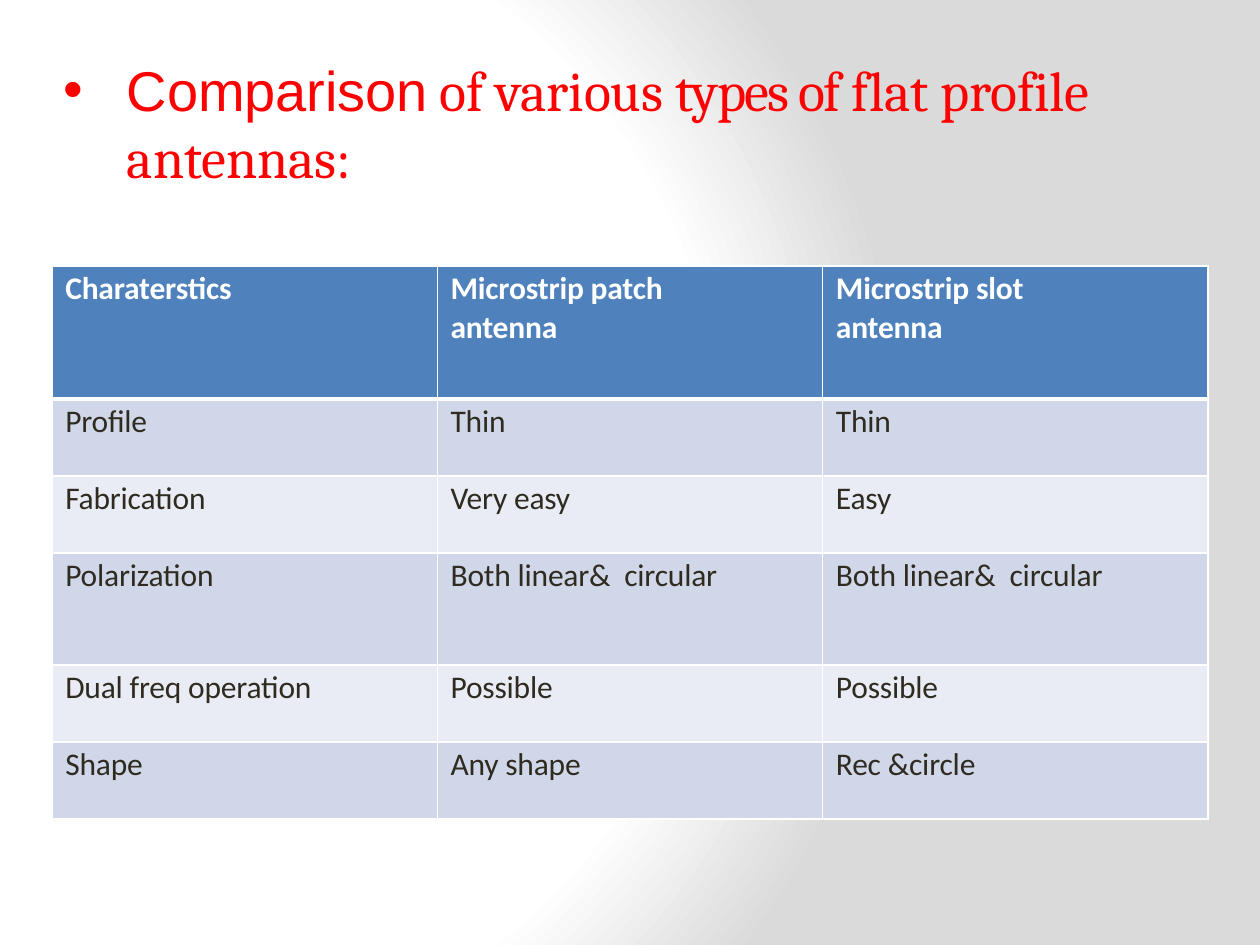
from pptx import Presentation
from pptx.dml.color import RGBColor
from pptx.enum.text import MSO_ANCHOR, MSO_AUTO_SIZE, PP_ALIGN
from pptx.oxml import parse_xml
from pptx.oxml.ns import nsdecls
from pptx.util import Pt

WHITE, RED, DARK = "FFFFFF", "FF0000", "2F2B20"
HEADER_FILL, BAND_FILLS = "4F81BC", ("E9ECF4", "D0D7E8")
BACKGROUND_STOPS = ((0, WHITE), (75, WHITE), (100, "DADADA"))
TITLE_RUNS = (
    ("Comparison", "Arial", -10),
    (" of various ", "Cambria", -10),
    ("types of ", "Cambria", -100),
    ("flat profile antennas:", "Cambria", -10),
)
ROWS = (
    ("Charaterstics", "Microstrip patch\nantenna", "Microstrip slot\nantenna"),
    ("Profile", "Thin", "Thin"),
    ("Fabrication", "Very easy", "Easy"),
    ("Polarization", "Both linear&  circular", "Both linear&  circular"),
    ("Dual freq operation", "Possible", "Possible"),
    ("Shape", "Any shape", "Rec &circle"),
)
ROW_HEIGHTS = (76, 44, 44, 64, 44, 44)
COLUMN_WIDTH = 220.2


def color(value):
    return RGBColor.from_string(value)


def set_values(target, values):
    for name, value in values.items():
        setattr(target, name, value)


def add_run(paragraph, text, font_values, font_color, spacing):
    run = paragraph.add_run()
    run.text = text
    set_values(run.font, font_values)
    run.font.color.rgb = color(font_color)
    run._r.get_or_add_rPr().set("spc", str(spacing))


def set_background(slide):
    stops = "".join(
        f'<a:gs pos="{position * 1000}"><a:srgbClr val="{value}"/></a:gs>'
        for position, value in BACKGROUND_STOPS
    )
    background = parse_xml(
        f'<p:bg {nsdecls("p", "a")}><p:bgPr><a:gradFill rotWithShape="1">'
        f'<a:gsLst>{stops}</a:gsLst><a:path path="circle">'
        '<a:fillToRect l="20000" t="50000" r="100000" b="50000"/></a:path>'
        '</a:gradFill><a:effectLst/></p:bgPr></p:bg>'
    )
    slide._element.cSld.insert(0, background)


def add_bullet(paragraph, left, indent):
    properties = paragraph._p.get_or_add_pPr()
    properties.set("marL", str(Pt(left)))
    properties.set("indent", str(Pt(indent)))
    properties.append(parse_xml(f'<a:buFont {nsdecls("a")} typeface="Arial"/>'))
    properties.append(parse_xml(f'<a:buChar {nsdecls("a")} char="•"/>'))


def fill_title(title):
    set_values(title, {"left": Pt(36), "top": Pt(30.2), "width": Pt(649.4), "height": Pt(79.2)})
    set_values(title.text_frame, {
        "margin_left": 0, "margin_top": Pt(1), "margin_right": 0, "margin_bottom": 0,
        "word_wrap": True, "vertical_anchor": MSO_ANCHOR.MIDDLE,
        "auto_size": MSO_AUTO_SIZE.SHAPE_TO_FIT_TEXT,
    })
    paragraph = title.text_frame.paragraphs[0]
    set_values(paragraph, {"alignment": PP_ALIGN.LEFT, "space_before": Pt(1.1)})
    add_bullet(paragraph, 36.5, -36)
    for text, font_name, spacing in TITLE_RUNS:
        add_run(paragraph, text, {"name": font_name, "size": Pt(32)}, RED, spacing)


def set_borders(cell, widths):
    properties = cell._tc.get_or_add_tcPr()
    for position, (side, width) in enumerate(widths.items()):
        properties.insert(position, parse_xml(
            f'<a:ln{side} {nsdecls("a")} w="{Pt(width)}"><a:solidFill>'
            f'<a:srgbClr val="{WHITE}"/></a:solidFill></a:ln{side}>'
        ))


def fill_cell(cell, text, row_index):
    is_header = row_index == 0
    set_values(cell, {
        "margin_left": Pt(7.6), "margin_top": Pt(2.2), "margin_right": 0, "margin_bottom": 0,
        "vertical_anchor": MSO_ANCHOR.TOP,
    })
    cell.fill.solid()
    cell.fill.fore_color.rgb = color(HEADER_FILL if is_header else BAND_FILLS[row_index % 2])
    set_borders(cell, {
        "L": 1, "R": 1, "T": 3 if row_index == 1 else 1, "B": 3 if is_header else 1,
    })
    frame = cell.text_frame
    for line_index, line in enumerate(text.split("\n")):
        paragraph = frame.add_paragraph() if line_index else frame.paragraphs[0]
        set_values(paragraph, {
            "alignment": PP_ALIGN.LEFT, "space_before": Pt(0.1 if line_index else 2.4),
        })
        font_values = {"name": "Calibri", "size": Pt(18), "bold": is_header}
        add_run(paragraph, line, font_values, WHITE if is_header else DARK, -10)


def add_comparison_table(slide):
    column_count = len(ROWS[0])
    table = slide.shapes.add_table(
        len(ROWS), column_count, Pt(29.7), Pt(152),
        Pt(COLUMN_WIDTH * column_count), Pt(sum(ROW_HEIGHTS)),
    ).table
    for column in table.columns:
        column.width = Pt(COLUMN_WIDTH)
    for row_index, (texts, height) in enumerate(zip(ROWS, ROW_HEIGHTS)):
        table.rows[row_index].height = Pt(height)
        for column_index, text in enumerate(texts):
            fill_cell(table.cell(row_index, column_index), text, row_index)


def main():
    presentation = Presentation()
    set_values(presentation, {"slide_width": Pt(720), "slide_height": Pt(540)})
    slide = presentation.slides.add_slide(presentation.slide_layouts.get_by_name("Title Only"))
    set_background(slide)
    fill_title(slide.shapes.title)
    add_comparison_table(slide)
    presentation.save("out.pptx")


if __name__ == "__main__":
    main()
